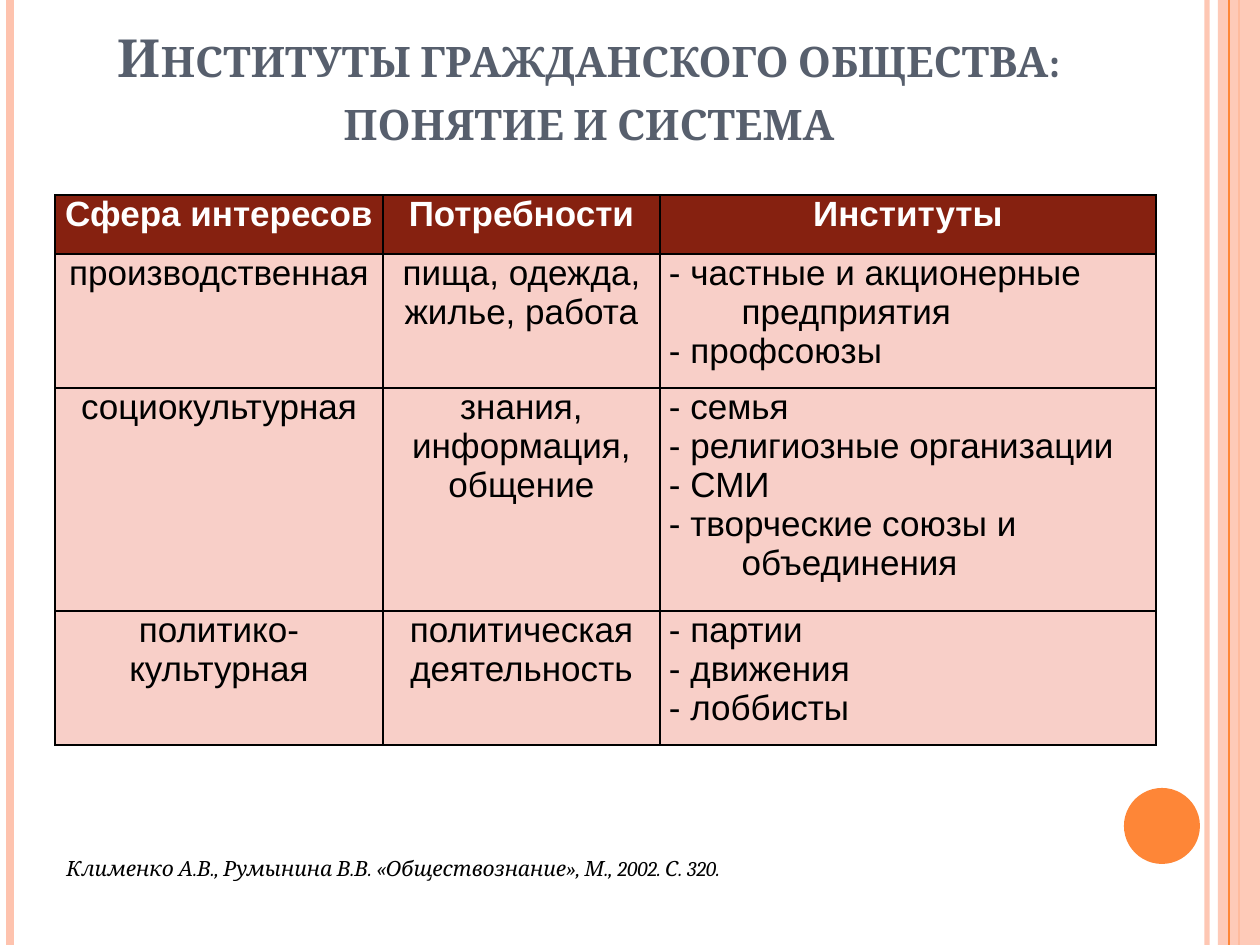
import pptx
import pptx.util
from lxml import etree
from pptx.dml.color import RGBColor
from pptx.enum.shapes import MSO_CONNECTOR, MSO_SHAPE
from pptx.enum.text import MSO_ANCHOR, MSO_AUTO_SIZE, PP_ALIGN
from pptx.oxml.ns import qn

SCALE = 914400 / 126
WIDTH, HEIGHT = 1260, 945

PEACH = RGBColor(0xFE, 0xC3, 0xAE)
ORANGE = RGBColor(0xFE, 0x86, 0x37)
SLATE = RGBColor(0x57, 0x5F, 0x6D)
MAROON = RGBColor(0x86, 0x21, 0x10)
PINK = RGBColor(0xF8, 0xCF, 0xC8)
BLACK = RGBColor(0, 0, 0)
WHITE = RGBColor(0xFF, 0xFF, 0xFF)

TITLE_FONT = {"name": "Cambria", "size": pptx.util.Pt(30), "bold": True}
SOURCE_FONT = {"name": "Cambria", "size": pptx.util.Pt(12), "italic": True}
HEADER_FONT = {"name": "Arial", "size": pptx.util.Pt(20), "bold": True}
BODY_FONT = {"name": "Arial", "size": pptx.util.Pt(20), "bold": False}

# x, colour, width in points, opacity in percent
STRIPES = [(1207, PEACH, 3, 93), (10, PEACH, 4.5, 100), (1239, ORANGE, 1.5, 100)]
INNER_STRIPE = (1229, ORANGE, 0.75, 100)

COLUMN_WIDTHS = [328, 277, 496]
ROW_HEIGHTS = [59, 134, 223, 134]
ROWS = [
    ["Сфера интересов", "Потребности", ["Институты"]],
    ["производственная", "пища, одежда, жилье, работа",
     ["- частные и акционерные", " предприятия", "- профсоюзы"]],
    ["социокультурная", "знания, информация, общение",
     ["- семья", "- религиозные организации", "- СМИ",
      "- творческие союзы и", " объединения"]],
    ["политико-культурная", "политическая деятельность",
     ["- партии", "- движения", "- лоббисты"]],
]


def px(length):
    return pptx.util.Emu(round(length * SCALE))


def box(*lengths):
    return [px(length) for length in lengths]


def set_attributes(target, values):
    for name, value in values.items():
        setattr(target, name, value)


def add_run(paragraph, text, font, color):
    run = paragraph.add_run()
    run.text = text
    set_attributes(run.font, font)
    run.font.color.rgb = color
    return run


def set_opacity(properties, percent):
    """Make the colour inside a shape's fill or line partly transparent."""
    if percent < 100:
        color = next(properties.iter(qn("a:srgbClr")))
        etree.SubElement(color, qn("a:alpha"), val=str(percent * 1000))


def add_stripe(slide, x, color, width, opacity):
    stripe = slide.shapes.add_connector(
        MSO_CONNECTOR.STRAIGHT, *box(x, 0, x, HEIGHT))
    stripe.line.color.rgb = color
    stripe.line.width = pptx.util.Pt(width)
    properties = stripe._element.spPr
    set_opacity(properties, opacity)
    etree.SubElement(properties, qn("a:effectLst"))


def add_plain_shape(slide, kind, place, color, opacity=100):
    shape = slide.shapes.add_shape(kind, *box(*place))
    shape.shadow.inherit = False
    shape.fill.solid()
    shape.fill.fore_color.rgb = color
    shape.line.fill.background()
    set_opacity(shape._element.spPr, opacity)


def add_title(slide, text):
    title = slide.shapes.title
    set_attributes(title, dict(zip(("left", "top", "width", "height"),
                                   box(74, 0, 1030, 157))))
    set_attributes(title.text_frame, {
        "word_wrap": True, "auto_size": MSO_AUTO_SIZE.NONE,
        "vertical_anchor": MSO_ANCHOR.BOTTOM})
    paragraph = title.text_frame.paragraphs[0]
    paragraph.alignment = PP_ALIGN.CENTER
    run = add_run(paragraph, text, TITLE_FONT, SLATE)
    run._r.get_or_add_rPr().set("cap", "small")


def set_borders(cell):
    """Draw a thin black line on all sides, placed before the cell's fill."""
    properties = cell._tc.get_or_add_tcPr()
    for index, side in enumerate(("lnL", "lnR", "lnT", "lnB")):
        line = etree.Element(qn(f"a:{side}"), w=str(pptx.util.Pt(1)))
        fill = etree.SubElement(line, qn("a:solidFill"))
        etree.SubElement(fill, qn("a:srgbClr"), val=str(BLACK))
        properties.insert(index, line)


def fill_cell(cell, content, is_header):
    set_attributes(cell, {
        "margin_left": px(9), "margin_right": px(9), "margin_top": 0,
        "margin_bottom": 0, "vertical_anchor": MSO_ANCHOR.TOP})
    cell.fill.solid()
    cell.fill.fore_color.rgb = MAROON if is_header else PINK
    set_borders(cell)
    is_list = isinstance(content, list)
    frame = cell.text_frame
    for index, text in enumerate(content if is_list else [content]):
        paragraph = frame.add_paragraph() if index else frame.paragraphs[0]
        centred = is_header or not is_list
        paragraph.alignment = PP_ALIGN.CENTER if centred else PP_ALIGN.LEFT
        if text.startswith(" "):
            paragraph.level = 1
            paragraph._p.get_or_add_pPr().set("marL", str(px(63)))
        add_run(paragraph, text, HEADER_FONT if is_header else BODY_FONT,
                WHITE if is_header else BLACK)


def add_institutions_table(slide):
    table = slide.shapes.add_table(
        len(ROWS), len(COLUMN_WIDTHS),
        *box(55, 195, sum(COLUMN_WIDTHS), sum(ROW_HEIGHTS))).table
    for column, width in zip(table.columns, COLUMN_WIDTHS):
        column.width = px(width)
    for row_index, (row, height) in enumerate(zip(table.rows, ROW_HEIGHTS)):
        row.height = px(height)
        for cell, content in zip(row.cells, ROWS[row_index]):
            fill_cell(cell, content, row_index == 0)


def add_source_note(slide, text):
    note = slide.shapes.add_textbox(*box(54, 849, 726, 38))
    set_attributes(note.text_frame, {
        "word_wrap": False, "auto_size": MSO_AUTO_SIZE.SHAPE_TO_FIT_TEXT,
        "vertical_anchor": MSO_ANCHOR.MIDDLE})
    add_run(note.text_frame.paragraphs[0], text, SOURCE_FONT, BLACK)


def main():
    presentation = pptx.Presentation()
    presentation.slide_width, presentation.slide_height = box(WIDTH, HEIGHT)
    slide = presentation.slides.add_slide(presentation.slide_layouts[5])
    slide.background.fill.solid()
    slide.background.fill.fore_color.rgb = WHITE

    for stripe in STRIPES:
        add_stripe(slide, *stripe)
    add_plain_shape(slide, MSO_SHAPE.RECTANGLE, (1218, 0, 42, HEIGHT), PEACH, 87)
    add_stripe(slide, *INNER_STRIPE)
    add_plain_shape(slide, MSO_SHAPE.OVAL, (1124, 788, 76, 76), ORANGE)

    add_title(slide, "Институты гражданского общества: понятие и система")
    add_institutions_table(slide)
    add_source_note(
        slide, "Клименко А.В., Румынина В.В. «Обществознание», М., 2002. С. 320.")
    presentation.save("out.pptx")


if __name__ == "__main__":
    main()
